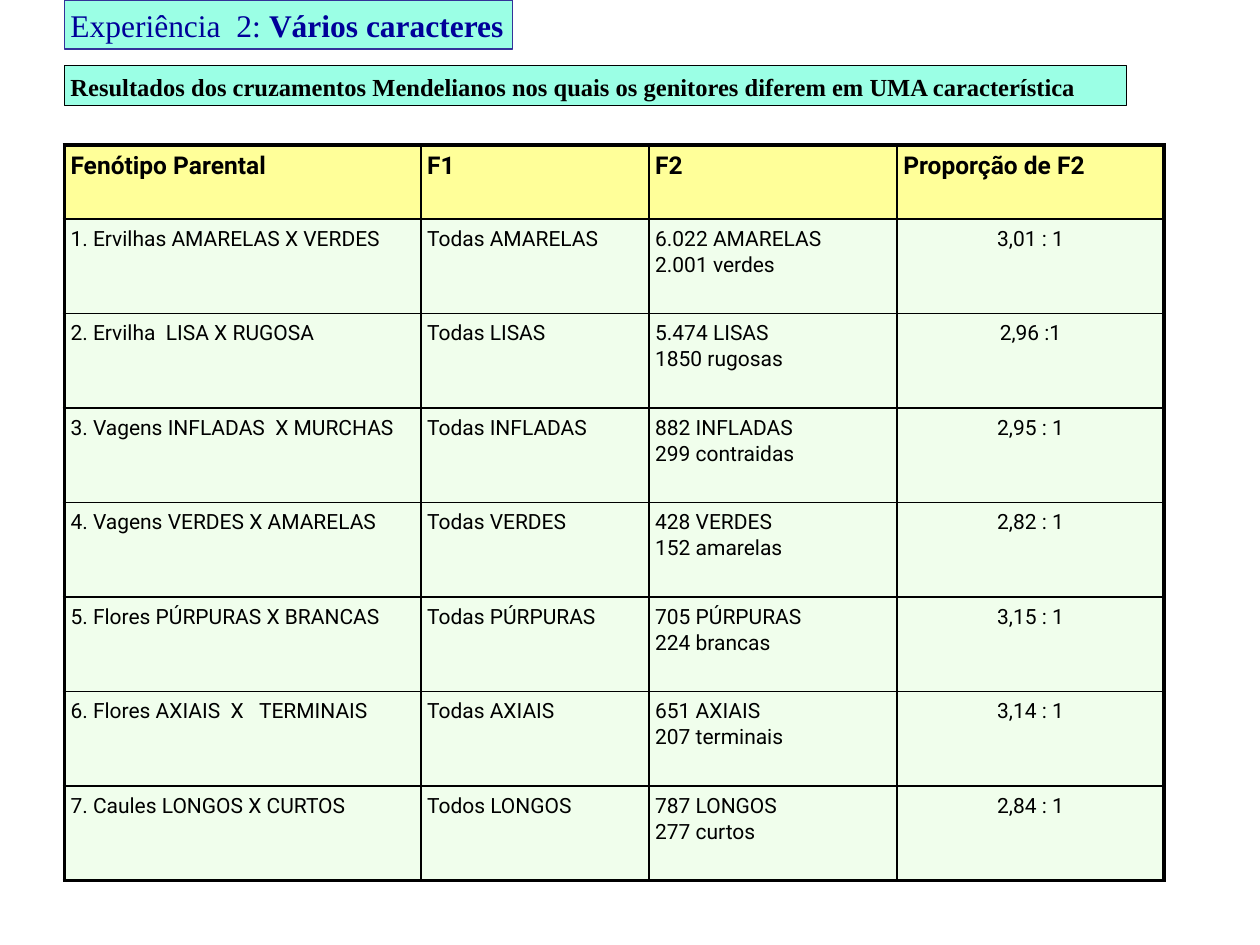
"""Build a slide with a table of Mendel's single-trait cross results."""
from lxml import etree
from pptx import Presentation
from pptx.dml.color import RGBColor
from pptx.enum.shapes import MSO_SHAPE
from pptx.enum.text import MSO_ANCHOR, MSO_AUTO_SIZE, PP_ALIGN
from pptx.oxml.ns import qn
from pptx.util import Inches, Pt

RECTANGLE = MSO_SHAPE.RECTANGLE
TOP = MSO_ANCHOR.TOP
GROW = MSO_AUTO_SIZE.SHAPE_TO_FIT_TEXT
LEFT, CENTER = PP_ALIGN.LEFT, PP_ALIGN.CENTER

HEADERS = ("Fenótipo Parental", "F1", "F2", "Proporção de F2")
CROSSES = [
    ("1. Ervilhas AMARELAS X VERDES", "Todas AMARELAS", "6.022 AMARELAS\n2.001 verdes", "3,01 : 1"),
    ("2. Ervilha  LISA X RUGOSA", "Todas LISAS", "5.474 LISAS\n1850 rugosas", "2,96 :1"),
    ("3. Vagens INFLADAS  X MURCHAS", "Todas INFLADAS", "882 INFLADAS\n299 contraidas", "2,95 : 1"),
    ("4. Vagens VERDES X AMARELAS", "Todas VERDES", "428 VERDES\n152 amarelas", "2,82 : 1"),
    ("5. Flores PÚRPURAS X BRANCAS", "Todas PÚRPURAS", "705 PÚRPURAS\n224 brancas", "3,15 : 1"),
    ("6. Flores AXIAIS  X   TERMINAIS", "Todas AXIAIS", "651 AXIAIS\n207 terminais", "3,14 : 1"),
    ("7. Caules LONGOS X CURTOS", "Todos LONGOS", "787 LONGOS\n277 curtos", "2,84 : 1"),
]
THEME = {
    "black": "000000", "navy": "000099", "title_line": "333399",
    "banner": "9BFFE5", "header": "FFFF99", "body": "F0FEEC",
    "banner_font": "Times New Roman", "table_font": "Roboto",
    "title_size": 18, "header_size": 14, "body_size": 12,
    "inset": 0.05, "outer_line": 2.25, "inner_line": 1, "banner_line": 0.75,
}
BANNERS = [
    {
        "box": (0.51, 0.52, 8.43, 0.32), "line": "black", "color": "black",
        "size": "header_size", "space_before": 8, "wrap": True,
        "runs": [("Resultados dos cruzamentos Mendelianos nos quais os genitores "
                  "diferem em UMA característica", True)],
    },
    {
        "box": (0.51, 0, 3.56, 0.39), "line": "title_line", "color": "navy",
        "size": "title_size", "space_before": 0, "wrap": False,
        "runs": [("Experiência  2: ", False), ("Vários caracteres", True)],
    },
]
TABLE_LEFT, TABLE_TOP = 0.51, 1.15
COLUMN_WIDTHS = (2.83, 1.81, 1.97, 2.12)
HEADER_HEIGHT, BODY_HEIGHT = 0.59, 0.75


def color(name):
    return RGBColor.from_string(THEME[name])


def apply(target, values):
    for name, value in values.items():
        setattr(target, name, value)


def style_font(font, family, size, tint, bold):
    apply(font, {"name": THEME[family], "size": Pt(THEME[size]), "bold": bold})
    font.color.rgb = color(tint)


def set_margins(target):
    sides = ("left", "top", "right", "bottom")
    apply(target, {f"margin_{side}": Inches(THEME["inset"]) for side in sides})


def add_banner(slide, banner):
    shape = slide.shapes.add_shape(RECTANGLE, *map(Inches, banner["box"]))
    shape.shadow.inherit = False
    shape.fill.solid()
    shape.fill.fore_color.rgb = color("banner")
    shape.line.color.rgb = color(banner["line"])
    shape.line.width = Pt(THEME["banner_line"])
    frame = shape.text_frame
    set_margins(frame)
    apply(frame, {"word_wrap": banner["wrap"], "auto_size": GROW, "vertical_anchor": TOP})
    paragraph = frame.paragraphs[0]
    apply(paragraph, {"alignment": LEFT, "space_before": Pt(banner["space_before"])})
    for text, bold in banner["runs"]:
        run = paragraph.add_run()
        run.text = text
        style_font(run.font, "banner_font", banner["size"], banner["color"], bold)


def add_borders(cell, outer_sides):
    properties = cell._tc.get_or_add_tcPr()
    for side, is_outer in outer_sides.items():
        width = Pt(THEME["outer_line" if is_outer else "inner_line"])
        line = etree.SubElement(properties, qn(f"a:ln{side}"), w=str(width))
        fill = etree.SubElement(line, qn("a:solidFill"))
        etree.SubElement(fill, qn("a:srgbClr"), val=THEME["black"])


def add_results_table(slide):
    rows = [HEADERS, *CROSSES]
    heights = [HEADER_HEIGHT] + [BODY_HEIGHT] * len(CROSSES)
    box = (TABLE_LEFT, TABLE_TOP, sum(COLUMN_WIDTHS), sum(heights))
    table = slide.shapes.add_table(len(rows), len(HEADERS), *map(Inches, box)).table
    apply(table, {"first_row": False, "horz_banding": False})
    for column, width in zip(table.columns, COLUMN_WIDTHS):
        column.width = Inches(width)
    last_row, last_column = len(rows) - 1, len(HEADERS) - 1
    for row_index, texts in enumerate(rows):
        table.rows[row_index].height = Inches(heights[row_index])
        is_header = row_index == 0
        kind = "header" if is_header else "body"
        for column_index, text in enumerate(texts):
            cell = table.cell(row_index, column_index)
            cell.text = text
            set_margins(cell)
            add_borders(cell, {
                "L": column_index == 0, "R": column_index == last_column,
                "T": is_header, "B": row_index == last_row,
            })
            cell.fill.solid()
            cell.fill.fore_color.rgb = color(kind)
            centered = column_index == last_column and not is_header
            for paragraph in cell.text_frame.paragraphs:
                apply(paragraph, {
                    "alignment": CENTER if centered else LEFT,
                    "line_spacing": 1.0 if is_header else 1.05,
                })
                style_font(paragraph.runs[0].font, "table_font", f"{kind}_size", "black", is_header)


def main():
    presentation = Presentation()
    apply(presentation, {"slide_width": Inches(10), "slide_height": Inches(7.5)})
    slide = presentation.slides.add_slide(presentation.slide_layouts[6])
    add_results_table(slide)
    for banner in BANNERS:
        add_banner(slide, banner)
    presentation.save("out.pptx")


if __name__ == "__main__":
    main()
